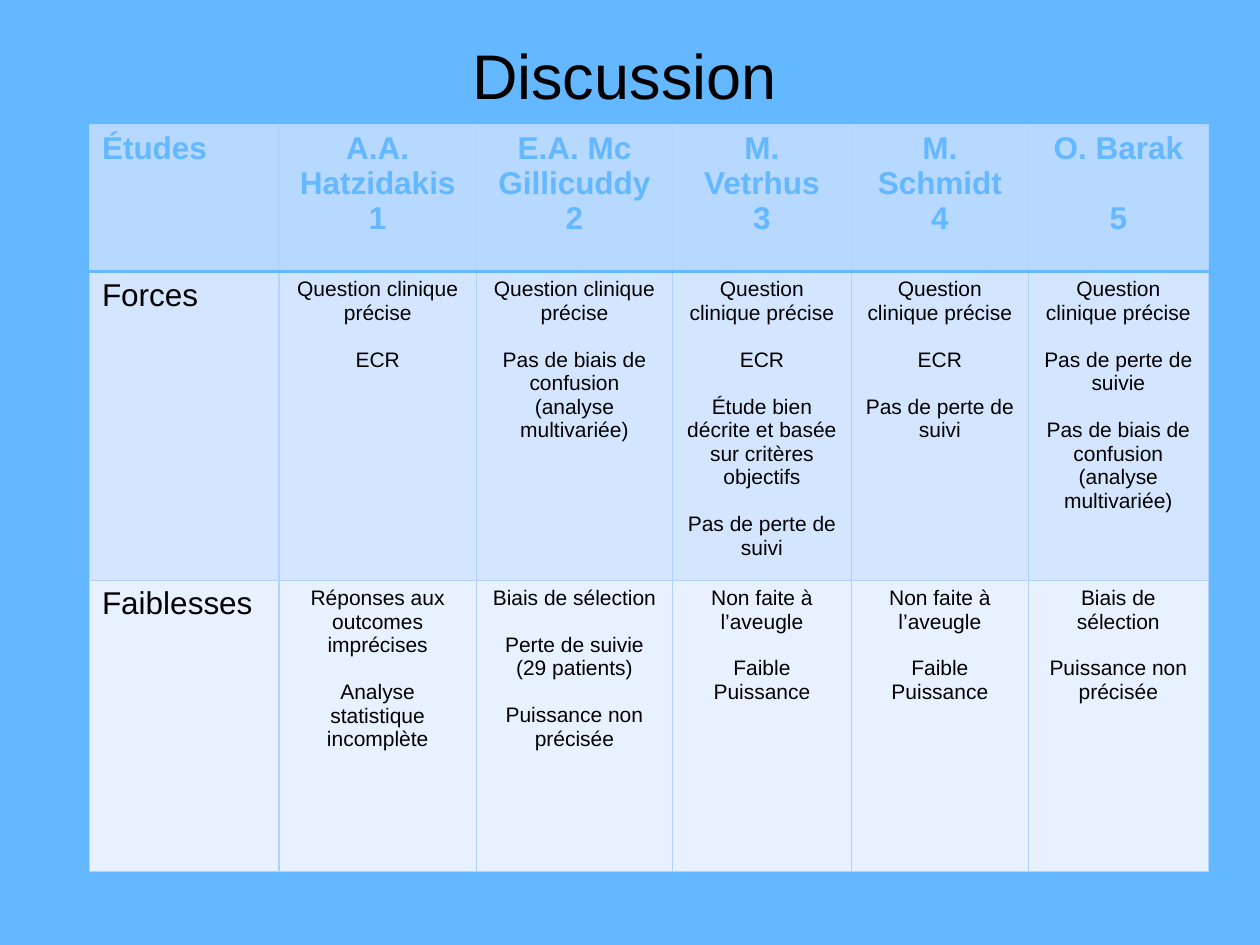
import pptx
import pptx.dml.color
import pptx.enum.text
import pptx.util
from lxml import etree
from pptx.oxml.ns import qn

Pt = pptx.util.Pt
RGBColor = pptx.dml.color.RGBColor
PP_ALIGN = pptx.enum.text.PP_ALIGN

SKY = RGBColor(0x63, 0xB8, 0xFF)
BLACK = RGBColor(0, 0, 0)
HEADER_FILL = RGBColor(0xB7, 0xD8, 0xFF)
STRENGTH_FILL = RGBColor(0xD4, 0xE6, 0xFF)
WEAKNESS_FILL = RGBColor(0xE7, 0xF1, 0xFF)
GRID = RGBColor(0xB1, 0xD3, 0xFB)
FONT = "Arial"

# Content: one list of paragraphs per cell
TITLE = "Discussion"
PRECISE = "Question clinique précise"
NO_CONFUSION = "Pas de biais de confusion (analyse multivariée)"
NO_LOSS = "Pas de perte de suivi"
NO_POWER = "Puissance non précisée"
NOT_BLIND = ["Non faite à l’aveugle", "Faible Puissance"]

HEADER = [
    ["Études"],
    ["A.A. Hatzidakis", "1"],
    ["E.A. Mc Gillicuddy", "2"],
    ["M. Vetrhus", "3"],
    ["M. Schmidt", "4"],
    ["O. Barak", "5"],
]
STRENGTHS = [
    ["Forces"],
    [PRECISE, "ECR"],
    [PRECISE, NO_CONFUSION],
    [PRECISE, "ECR", "Étude bien décrite et basée sur critères objectifs", NO_LOSS],
    [PRECISE, "ECR", NO_LOSS],
    [PRECISE, "Pas de perte de suivie", NO_CONFUSION],
]
WEAKNESSES = [
    ["Faiblesses"],
    ["Réponses aux outcomes imprécises", "Analyse statistique incomplète"],
    ["Biais de sélection", "Perte de suivie\n(29 patients)", NO_POWER],
    NOT_BLIND,
    NOT_BLIND,
    ["Biais de sélection", NO_POWER],
]
ROWS = [
    (HEADER, 84, HEADER_FILL),
    (STRENGTHS, 176.5, STRENGTH_FILL),
    (WEAKNESSES, 166.5, WEAKNESS_FILL),
]
COLUMN_WIDTHS = [108.3, 112.9, 112, 102.3, 101.1, 102.9]
TABLE_LEFT, TABLE_TOP = 51.1, 71
BODY_GAP = 13.4  # one line of body text
HEADER_GAP = 20  # one line of header text


def set_border(cell, side, color, width):
    properties = cell._tc.get_or_add_tcPr()
    line = etree.SubElement(properties, qn(f"a:ln{side}"), w=str(Pt(width)))
    fill = etree.SubElement(line, qn("a:solidFill"))
    etree.SubElement(fill, qn("a:srgbClr"), val=str(color))


def fill_cell(cell, texts, size, bold, color, align, gap):
    frame = cell.text_frame
    for index, text in enumerate(texts):
        para = frame.add_paragraph() if index else frame.paragraphs[0]
        para.text = text
        para.alignment = align
        if index:
            para.space_before = Pt(gap)
        para.font.name = FONT
        para.font.size = Pt(size)
        para.font.bold = bold
        para.font.color.rgb = color


deck = pptx.Presentation()
deck.slide_width, deck.slide_height = Pt(720), Pt(540)
page = deck.slides.add_slide(deck.slide_layouts[5])
page.background.fill.solid()
page.background.fill.fore_color.rgb = SKY

# Title
title = page.shapes.title
title.left, title.top, title.width, title.height = Pt(108), Pt(18.7), Pt(497.5), Pt(49)
title.text_frame.text = TITLE
title.text_frame.auto_size = pptx.enum.text.MSO_AUTO_SIZE.NONE
title.text_frame.vertical_anchor = pptx.enum.text.MSO_ANCHOR.BOTTOM
heading = title.text_frame.paragraphs[0]
heading.alignment = PP_ALIGN.CENTER
heading.font.name = FONT
heading.font.size = Pt(36)
heading.font.color.rgb = BLACK

# Table of studies
table = page.shapes.add_table(
    len(ROWS), len(COLUMN_WIDTHS), Pt(TABLE_LEFT), Pt(TABLE_TOP),
    Pt(sum(COLUMN_WIDTHS)), Pt(sum(height for _, height, _ in ROWS))).table
table.horz_banding = False
for column, width in zip(table.columns, COLUMN_WIDTHS):
    column.width = Pt(width)

for row, (contents, height, background) in enumerate(ROWS):
    table.rows[row].height = Pt(height)
    is_header = row == 0
    for column, texts in enumerate(contents):
        cell = table.cell(row, column)
        is_label = column == 0
        # The rule under the header belongs to both rows it separates
        for side in "LRTB":
            under_header = (row, side) in ((0, "B"), (1, "T"))
            set_border(cell, side, SKY if under_header else GRID, 2 if under_header else 0.75)
        cell.fill.solid()
        cell.fill.fore_color.rgb = background
        # Only the last study leaves a line between name and number
        spaced = not is_header or column == len(contents) - 1
        line_gap = HEADER_GAP if is_header else BODY_GAP
        fill_cell(
            cell, texts,
            size=18 if is_header or is_label else 12,
            bold=is_header,
            color=SKY if is_header else BLACK,
            align=PP_ALIGN.LEFT if is_label else PP_ALIGN.CENTER,
            gap=line_gap if spaced else 0)

deck.save("out.pptx")
